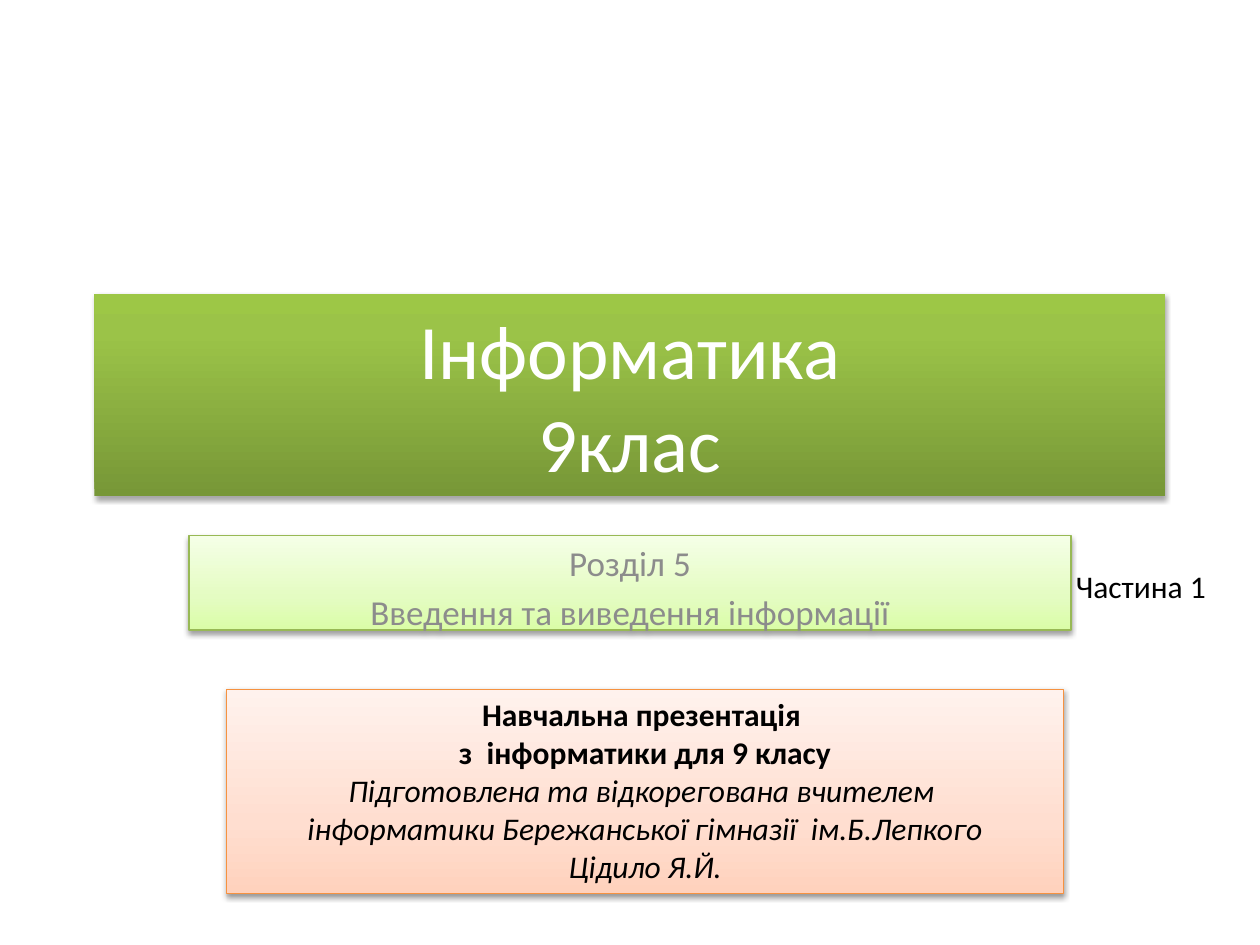
from dataclasses import dataclass
from copy import deepcopy

from lxml.etree import SubElement
from pptx import Presentation
from pptx.dml.color import RGBColor
from pptx.enum.shapes import MSO_SHAPE
from pptx.enum.text import MSO_ANCHOR, MSO_AUTO_SIZE, PP_ALIGN
from pptx.oxml.ns import qn
from pptx.util import Inches, Pt


@dataclass(frozen=True)
class Theme:
    font: str = "Calibri"
    title_size: int = 44
    subtitle_size: int = 20
    body_size: int = 18
    white: str = "FFFFFF"
    gray: str = "8C8C8C"
    black: str = "000000"
    green_line: str = "98B955"
    orange_line: str = "F69240"
    deep_green: tuple = ((0, "779737"), (0.8, "9BC348"), (1, "9DC746"))
    pale_green: tuple = ((0, "DAFDA7"), (0.35, "E4FCC2"), (1, "F5FFE7"))
    pale_orange: tuple = ((0, "FFD2BD"), (0.35, "FFDED0"), (1, "FFF2ED"))


class SlideBuilder:
    """Draws gradient panels and labels on one slide in a shared theme."""

    def __init__(self, slide, theme):
        self.slide = slide
        self.theme = theme

    def panel(self, left, top, width, height, stops, line=None, shadow_opacity=38, shadow_distance=1.6):
        shape = self.slide.shapes.add_shape(
            MSO_SHAPE.RECTANGLE, Inches(left), Inches(top), Inches(width), Inches(height)
        )
        self.gradient(shape, stops)
        if line:
            shape.line.color.rgb = RGBColor.from_string(line)
            shape.line.width = Pt(0.75)
        else:
            shape.line.fill.background()
        self.shadow(shape, shadow_opacity, shadow_distance)
        shape.text_frame.word_wrap = True
        return shape.text_frame

    def gradient(self, shape, stops):
        shape.fill.gradient()
        shape.fill.gradient_angle = 90
        stop_list = shape._element.spPr.find(qn("a:gradFill")).find(qn("a:gsLst"))
        stop_list.insert(1, deepcopy(stop_list[0]))
        for stop, (position, color) in zip(shape.fill.gradient_stops, stops):
            stop.position = position
            stop.color.rgb = RGBColor.from_string(color)

    def shadow(self, shape, opacity, distance):
        shape.shadow.inherit = False
        effects = shape._element.spPr.find(qn("a:effectLst"))
        outer = SubElement(
            effects, qn("a:outerShdw"), blurRad=str(Pt(3.1)), dist=str(Pt(distance)),
            dir="5400000", rotWithShape="0",
        )
        color = SubElement(outer, qn("a:srgbClr"), val=self.theme.black)
        SubElement(color, qn("a:alpha"), val=str(opacity * 1000))

    def label(self, left, top, width, height, text):
        text_frame = self.slide.shapes.add_textbox(
            Inches(left), Inches(top), Inches(width), Inches(height)
        ).text_frame
        text_frame.word_wrap = False
        text_frame.auto_size = MSO_AUTO_SIZE.SHAPE_TO_FIT_TEXT
        self.fill_text(text_frame, text, self.theme.body_size, self.theme.black, PP_ALIGN.LEFT)

    def fill_text(self, text_frame, text, size, color, alignment=PP_ALIGN.CENTER, space_before=0):
        text_frame.text = text
        for index, paragraph in enumerate(text_frame.paragraphs):
            paragraph.alignment = alignment
            if index and space_before:
                paragraph.space_before = Pt(space_before)
            for run in paragraph.runs:
                run.font.name = self.theme.font
                run.font.size = Pt(size)
                run.font.color.rgb = RGBColor.from_string(color)


def main():
    presentation = Presentation()
    presentation.slide_width, presentation.slide_height = Inches(10), Inches(7.5)
    slide = presentation.slides.add_slide(presentation.slide_layouts[6])
    theme = Theme()
    builder = SlideBuilder(slide, theme)

    title = builder.panel(
        0.75, 2.33, 8.5, 1.61, theme.deep_green, shadow_opacity=35, shadow_distance=1.8
    )
    title.vertical_anchor = MSO_ANCHOR.MIDDLE
    builder.fill_text(title, "Інформатика\v9клас", theme.title_size, theme.white)

    subtitle = builder.panel(1.5, 4.25, 7, 0.75, theme.pale_green, theme.green_line)
    subtitle.vertical_anchor = MSO_ANCHOR.TOP
    builder.fill_text(
        subtitle, "Розділ 5\nВведення та виведення інформації",
        theme.subtitle_size, theme.gray, space_before=4,
    )

    builder.label(8.44, 4.45, 1.25, 0.4, "Частина 1")

    credits = builder.panel(1.8, 5.47, 6.64, 1.62, theme.pale_orange, theme.orange_line)
    credits.vertical_anchor = MSO_ANCHOR.TOP
    credits.auto_size = MSO_AUTO_SIZE.SHAPE_TO_FIT_TEXT
    heading = ["Навчальна презентація ", "з  інформатики для 9 класу"]
    authors = [
        "Підготовлена та відкорегована вчителем ",
        "інформатики Бережанської гімназії  ім.Б.Лепкого",
        "Цідило Я.Й.",
    ]
    builder.fill_text(credits, "\n".join(heading + authors), theme.body_size, theme.black)
    for index, paragraph in enumerate(credits.paragraphs):
        for run in paragraph.runs:
            run.font.bold = index < len(heading)
            run.font.italic = index >= len(heading)

    presentation.save("out.pptx")


if __name__ == "__main__":
    main()
